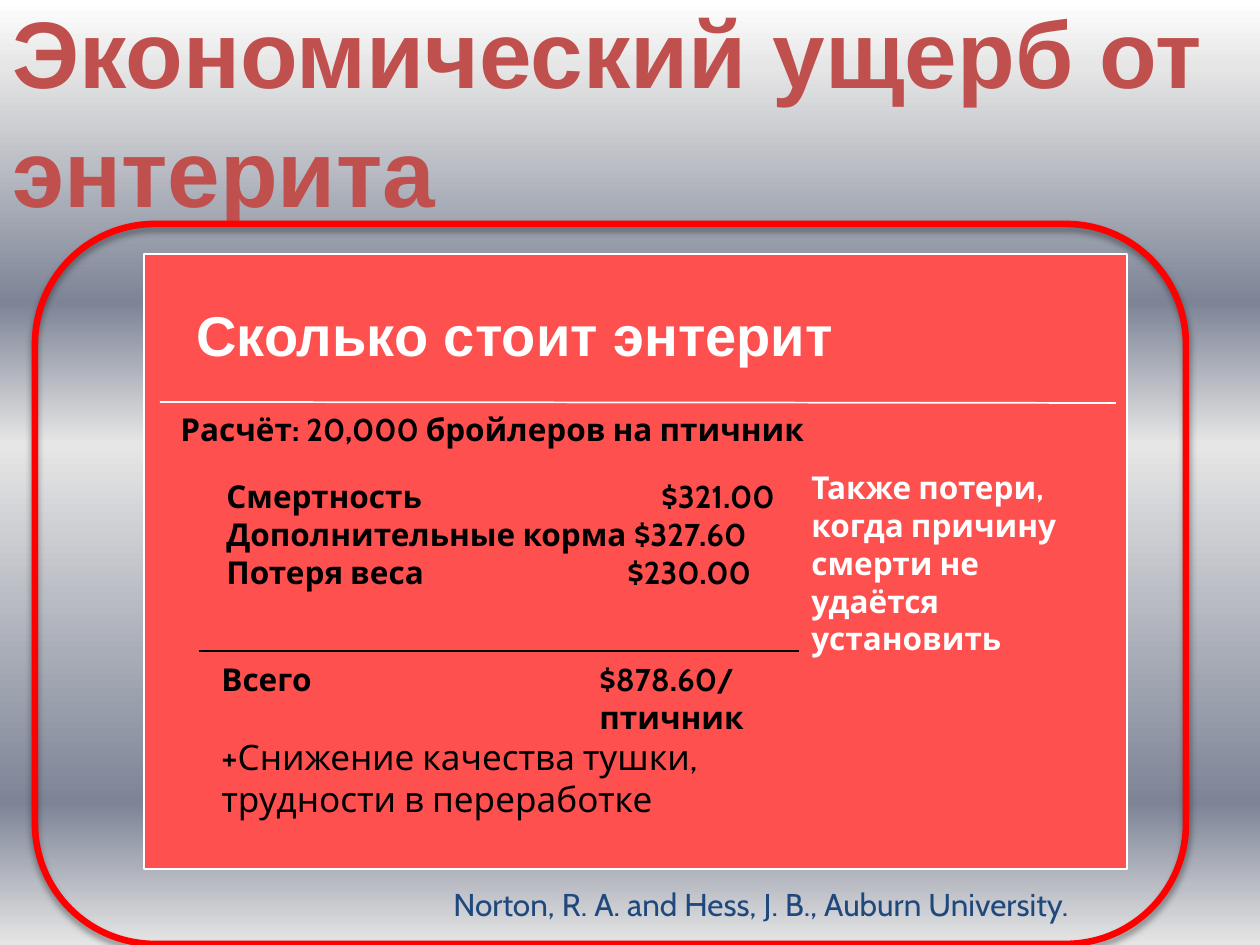
"""Build a slide on the economic damage caused by enteritis in broilers."""
import pptx
import pptx.dml.color
import pptx.enum.shapes
import pptx.enum.text
import pptx.oxml
import pptx.oxml.ns
import pptx.util
from lxml import etree

PX = 914400 // 126
NS = 'xmlns:a="http://schemas.openxmlformats.org/drawingml/2006/main"'
RED, WHITE, BLACK = "FF5050", "FFFFFF", "000000"


def paint(color_format, value):
    color_format.rgb = pptx.dml.color.RGBColor.from_string(value)


def write(box, lines, face, color, fill=None):
    shape = slide.shapes.add_textbox(*(PX * n for n in box))
    if fill:
        shape.fill.solid()
        paint(shape.fill.fore_color, fill)
    frame = shape.text_frame
    frame.word_wrap = True
    for index, (text, size, bold, tab) in enumerate(lines):
        paragraph = frame.paragraphs[0] if index == 0 else frame.add_paragraph()
        paragraph.text = text
        if tab:
            tabs = f'<a:tabLst {NS}><a:tab pos="{tab * PX}" algn="l"/></a:tabLst>'
            paragraph._p.get_or_add_pPr().append(pptx.oxml.parse_xml(tabs))
        paragraph.font.size = pptx.util.Pt(size)
        paragraph.font.name = face
        paragraph.font.bold = bold
        paint(paragraph.font.color, color)
    return frame


prs = pptx.Presentation()
prs.slide_width = pptx.util.Inches(10)
prs.slide_height = pptx.util.Inches(7.5)
slide = prs.slides.add_slide(prs.slide_layouts[6])

background = slide.background.fill
background.gradient()
background.gradient_angle = 270
stops = slide.element.find(".//" + pptx.oxml.ns.qn("a:gsLst"))
for stop in list(stops):
    stops.remove(stop)
for position, color in [(0, WHITE), (7, "E6E6E6"), (32, "7D8496"),
                        (47, "E6E6E6"), (85, "7D8496"), (100, "E6E6E6")]:
    stops.append(pptx.oxml.parse_xml(
        f'<a:gs {NS} pos="{position * 1000}"><a:srgbClr val="{color}"/></a:gs>'))

panel = slide.shapes.add_shape(pptx.enum.shapes.MSO_SHAPE.RECTANGLE,
                               *(PX * n for n in (144, 254, 983, 615)))
panel.shadow.inherit = False
panel.fill.solid()
paint(panel.fill.fore_color, RED)
paint(panel.line.color, WHITE)
panel.line.width = pptx.util.Pt(1)

for x1, y1, x2, y2, color in [(160, 402, 1116, 403, WHITE), (199, 651, 1106, 651, BLACK)]:
    rule = slide.shapes.add_connector(pptx.enum.shapes.MSO_CONNECTOR.STRAIGHT,
                                      *(PX * n for n in (x1, y1, x2, y2)))
    paint(rule.line.color, color)
    rule.line.width = pptx.util.Pt(1)
    etree.SubElement(rule._element.spPr, pptx.oxml.ns.qn("a:effectLst"))

write((184, 294, 932, 81), [("Сколько стоит энтерит", 32, True, None)], "Arial", WHITE, RED)
write((168, 404, 751, 64), [("Расчёт: 20,000 бройлеров на птичник", 18, True, None)],
      "Cabin", BLACK, RED)
write((214, 471, 911, 127), [("Смертность\t$321.00", 18, True, 435),
                             ("Дополнительные корма $327.60", 18, True, None),
                             ("Потеря веса\t$230.00", 18, True, 401)], "Cabin", BLACK, RED)
write((209, 654, 575, 199), [("Всего\t$878.60/", 18, True, 378),
                             ("\tптичник", 18, True, 378),
                             ("+Снижение качества тушки,\nтрудности в переработке",
                              20, False, None)], "Cabin", BLACK, RED)
write((441, 879, 654, 50),
      [("Norton, R. A. and Hess, J. B., Auburn University.", 18, False, None)],
      "Cabin", "1F497D")
write((799, 462, 325, 267),
      [("Также потери, когда причину смерти не удаётся установить", 18, True, None)],
      "Cabin", WHITE, RED)

title = write((0, 49, 1260, 116), [("Экономический ущерб от энтерита", 54, True, None)],
              "Arial", "C0504D")
title.vertical_anchor = pptx.enum.text.MSO_ANCHOR.MIDDLE
title.paragraphs[0].line_spacing = 1.05

border = slide.shapes.add_shape(pptx.enum.shapes.MSO_SHAPE.ROUNDED_RECTANGLE,
                                *(PX * n for n in (35, 224, 1151, 720)))
border.shadow.inherit = False
border.fill.background()
paint(border.line.color, "FF0000")
border.line.width = pptx.util.Pt(3.75)
border._element.spPr.find(pptx.oxml.ns.qn("a:effectLst")).append(pptx.oxml.parse_xml(
    f'<a:outerShdw {NS} blurRad="50800" dist="38100" dir="5400000" rotWithShape="0">'
    f'<a:srgbClr val="{BLACK}"><a:alpha val="40000"/></a:srgbClr></a:outerShdw>'))

prs.save("out.pptx")
